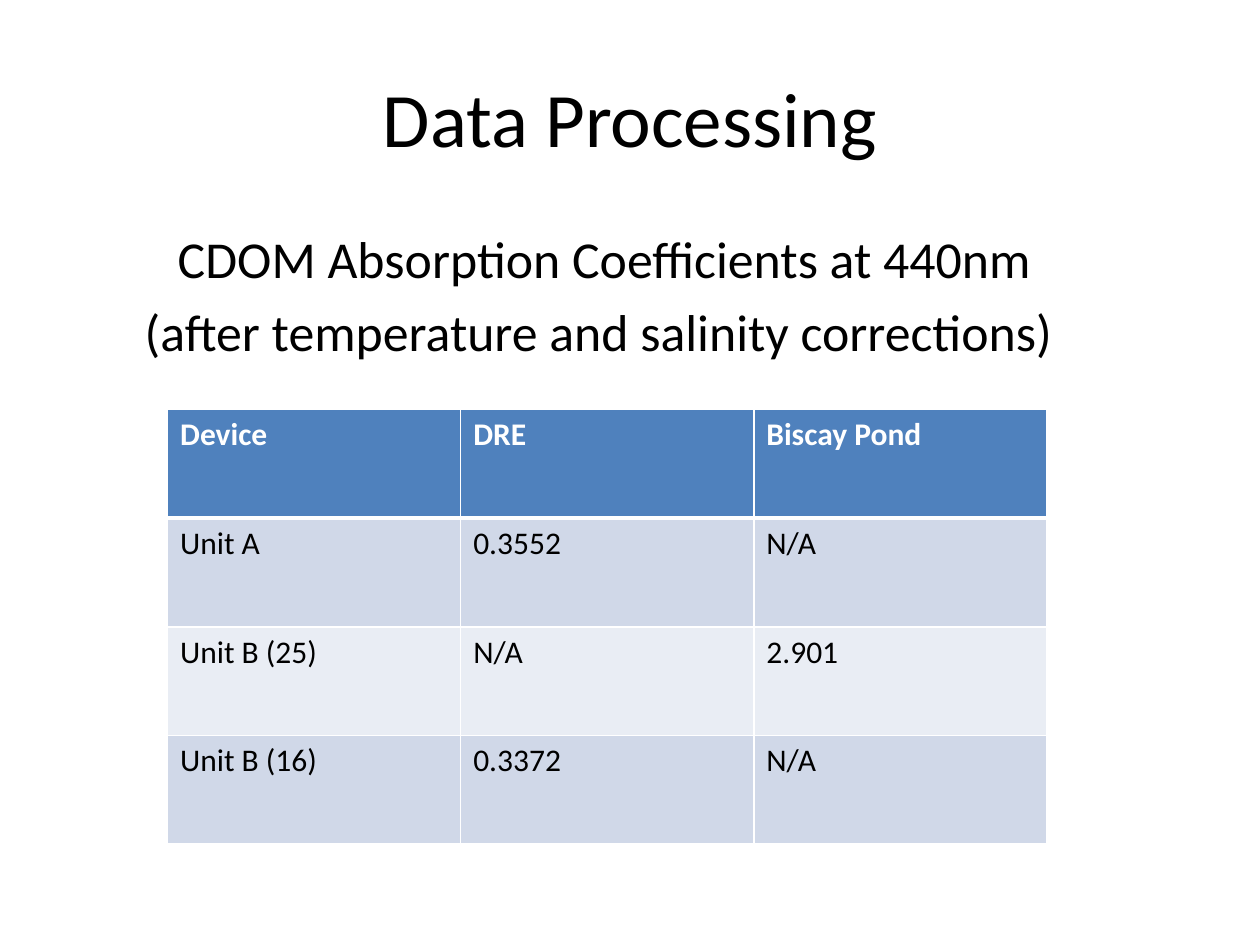
from lxml import etree
from pptx import Presentation
from pptx.dml.color import RGBColor
from pptx.enum.text import MSO_ANCHOR, PP_ALIGN
from pptx.oxml.ns import qn
from pptx.util import Inches, Pt

CENTER, LEFT = PP_ALIGN.CENTER, PP_ALIGN.LEFT
TOP, MIDDLE = MSO_ANCHOR.TOP, MSO_ANCHOR.MIDDLE

FONT = "Calibri"
BLACK = RGBColor(0x00, 0x00, 0x00)
WHITE = RGBColor(0xFF, 0xFF, 0xFF)
HEADER_BLUE = RGBColor(0x4F, 0x81, 0xBD)
BANDS = (RGBColor(0xE9, 0xED, 0xF4), RGBColor(0xD0, 0xD8, 0xE8))

SUBTITLE = [
    "CDOM Absorption Coefficients at 440nm",
    "(after temperature and salinity corrections) ",
]
COEFFICIENTS = [
    ["Device", "DRE", "Biscay Pond"],
    ["Unit A", "0.3552", "N/A"],
    ["Unit B (25)", "N/A", "2.901"],
    ["Unit B (16)", "0.3372", "N/A"],
]


def add_span(para, text, size, color=BLACK, bold=False):
    span = para.add_run()
    span.text = text
    span.font.name = FONT
    span.font.size = Pt(size)
    span.font.color.rgb = color
    span.font.bold = bold


def add_centered_text(page, area, lines, size, anchor, space_before=0):
    box = page.shapes.add_textbox(*map(Inches, area))
    frame = box.text_frame
    frame.word_wrap = True
    frame.vertical_anchor = anchor
    for index, line in enumerate(lines):
        para = frame.add_paragraph() if index else frame.paragraphs[0]
        para.alignment = CENTER
        para.space_before = Pt(space_before)
        add_span(para, line, size)


def set_borders(cell, widths):
    """Draw white cell borders; widths maps L, R, T, B to points."""
    props = cell._tc.get_or_add_tcPr()
    for side, width in widths.items():
        line = etree.SubElement(props, qn(f"a:ln{side}"), w=str(Pt(width)))
        fill = etree.SubElement(line, qn("a:solidFill"))
        etree.SubElement(fill, qn("a:srgbClr"), val=str(WHITE))


def add_banded_table(page, area, rows, size):
    frame = page.shapes.add_table(len(rows), len(rows[0]), *map(Inches, area))
    table = frame.table
    for r, row in enumerate(rows):
        header = r == 0
        for c, text in enumerate(row):
            cell = table.cell(r, c)
            set_borders(cell, {"L": 1, "R": 1,
                               "T": 3 if r == 1 else 1,
                               "B": 3 if header else 1})
            cell.fill.solid()
            cell.fill.fore_color.rgb = HEADER_BLUE if header else BANDS[r % 2]
            para = cell.text_frame.paragraphs[0]
            para.alignment = LEFT
            add_span(para, text, size, WHITE if header else BLACK, header)


def main():
    deck = Presentation()
    deck.slide_width, deck.slide_height = Inches(10), Inches(7.5)
    page = deck.slides.add_slide(deck.slide_layouts[6])
    add_centered_text(page, (0.5, 0.3, 9, 1.25), ["Data Processing"], 44, MIDDLE)
    add_centered_text(page, (0.91, 1.75, 7.78, 1.5), SUBTITLE, 29.6, TOP,
                      space_before=6)
    add_banded_table(page, (1.33, 3.25, 6.98, 3.45), COEFFICIENTS, 18)
    deck.save("out.pptx")


if __name__ == "__main__":
    main()
